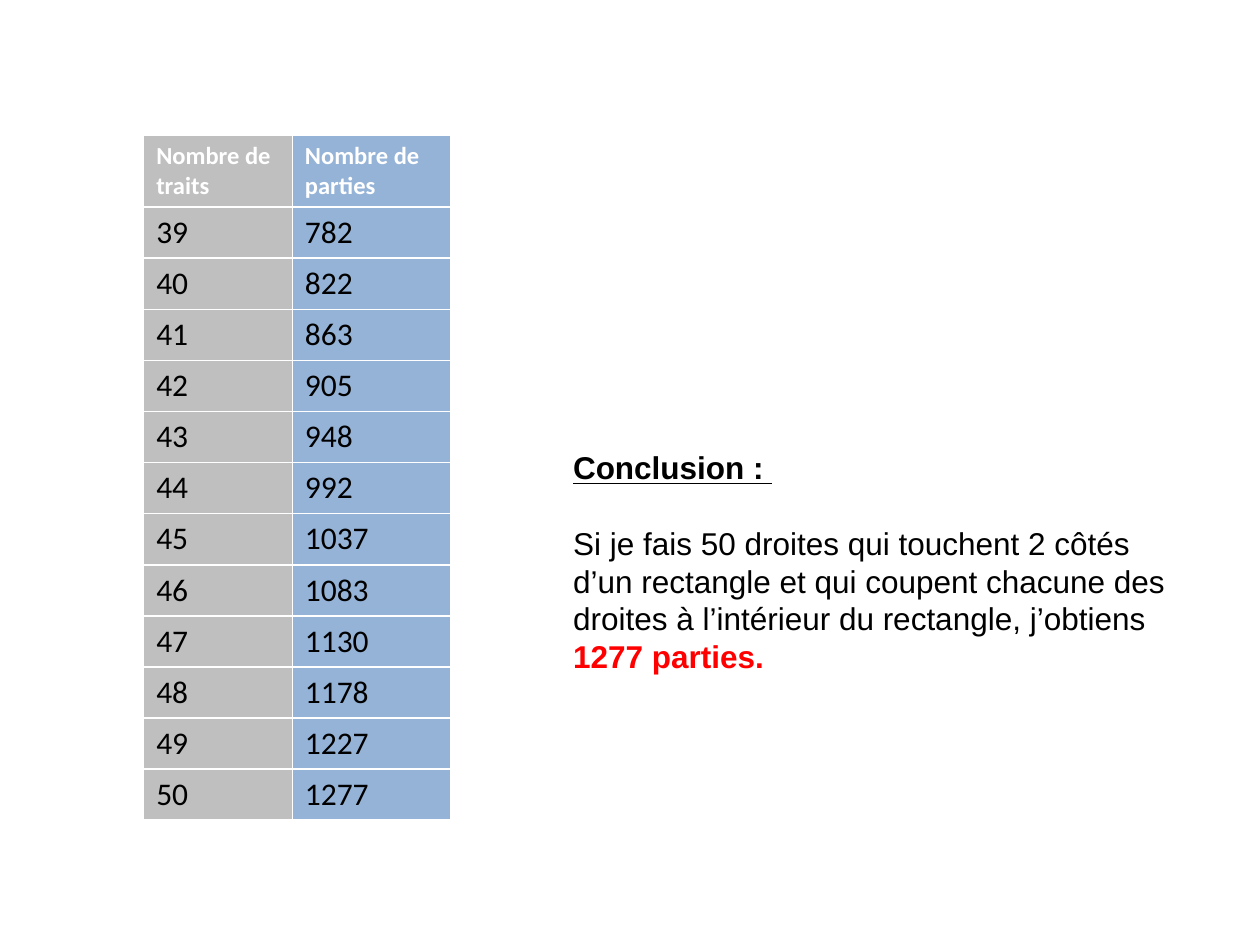
from pptx import Presentation
from pptx.dml.color import RGBColor as RGB
from pptx.util import Inches, Pt

# Content
HEADS = ("Nombre de traits", "Nombre de parties")
PARTS = (782, 822, 863, 905, 948, 992, 1037, 1083, 1130, 1178, 1227, 1277)
ROWS = [HEADS, *enumerate(PARTS, start=39)]
TITLE = "Conclusion : "
BODY = ("Si je fais 50 droites qui touchent 2 côtés d’un rectangle et qui "
        "coupent chacune des droites à l’intérieur du rectangle, j’obtiens ")
RESULT = "1277 parties."

# Look
COLORS = {name: RGB.from_string(code) for name, code in {
    "gray": "BFBFBF", "blue": "95B3D7", "white": "FFFFFF",
    "black": "000000", "red": "FF0000"}.items()}
FILLS = ("gray", "blue")
WIDTHS = (1.18, 1.26)
HEAD_H, ROW_H = 0.57, 0.405


def style(font, name, size, color, bold=False):
    font.name, font.size, font.bold = name, Pt(size), bold
    font.color.rgb = COLORS[color]


def add_table(slide):
    height = HEAD_H + ROW_H * len(PARTS)
    table = slide.shapes.add_table(
        len(ROWS), len(HEADS), Inches(1.14), Inches(1.07),
        Inches(sum(WIDTHS)), Inches(height)).table
    for col, width in zip(table.columns, WIDTHS):
        col.width = Inches(width)
    for r, values in enumerate(ROWS):
        head = r == 0
        table.rows[r].height = Inches(HEAD_H if head else ROW_H)
        for c, value in enumerate(values):
            cell = table.cell(r, c)
            cell.text = str(value)
            cell.fill.solid()
            cell.fill.fore_color.rgb = COLORS[FILLS[c]]
            style(cell.text_frame.paragraphs[0].font, "Calibri",
                  14 if head else 18, "white" if head else "black", head)


def add_note(slide):
    frame = slide.shapes.add_textbox(
        Inches(4.45), Inches(3.51), Inches(4.96), Inches(2.22)).text_frame
    frame.word_wrap = True
    title, body = frame.paragraphs[0], frame.add_paragraph()
    title.text = TITLE
    style(title.font, "Arial", 18, "black", True)
    title.font.underline = True
    title.space_after = Pt(21.5)
    body.text = BODY
    style(body.font, "Arial", 18, "black")
    result = body.add_run()
    result.text = RESULT
    style(result.font, "Arial", 18, "red", True)


def main():
    deck = Presentation()
    deck.slide_width, deck.slide_height = Inches(10), Inches(7.5)
    slide = deck.slides.add_slide(deck.slide_layouts[6])
    add_table(slide)
    add_note(slide)
    deck.save("out.pptx")


if __name__ == "__main__":
    main()
